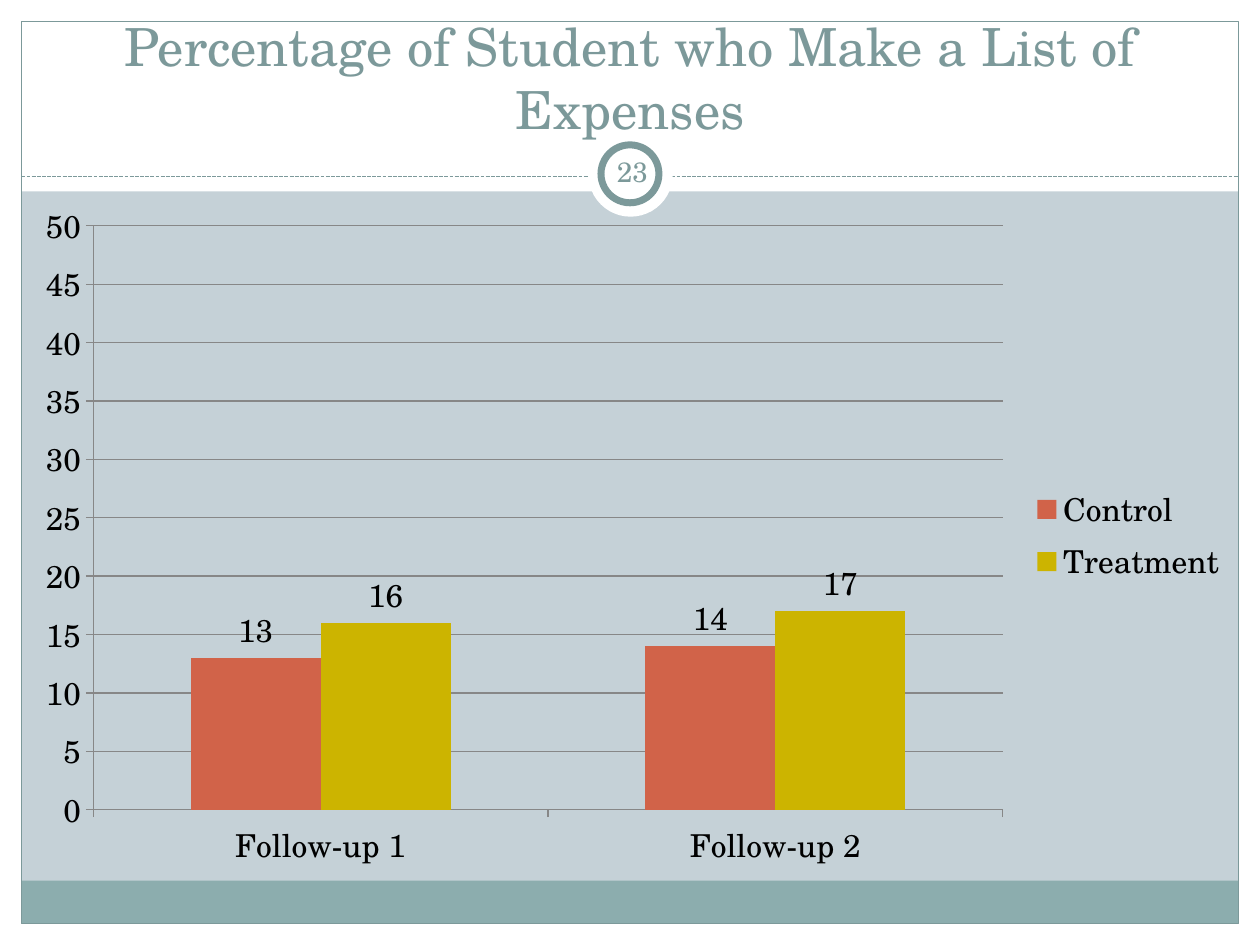
from lxml.etree import SubElement
from pptx import Presentation
from pptx.chart.data import CategoryChartData
from pptx.dml.color import RGBColor
from pptx.enum.chart import XL_CHART_TYPE as ChartType, XL_LABEL_POSITION as LabelPosition
from pptx.enum.chart import XL_LEGEND_POSITION as LegendPosition, XL_TICK_MARK as TickMark
from pptx.enum.dml import MSO_LINE as LineStyle
from pptx.enum.shapes import MSO_CONNECTOR as Connector, MSO_SHAPE as Shape
from pptx.enum.text import MSO_ANCHOR as Anchor, MSO_AUTO_SIZE as AutoSize, PP_ALIGN as Align
from pptx.oxml.ns import qn
from pptx.util import Inches, Pt

FONT = "TeX Gyre Schola"
BACKGROUND, WHITE, BLACK = "C5D1D7", "FFFFFF", "000000"
ACCENT, FOOTER, GRID = "7C999A", "8CADAE", "878787"
WIDTH, HEIGHT, MARGIN = 10, 7.5, 0.17
SERIES = [("Control", (13, 14), "D16349"), ("Treatment", (16, 17), "CCB400")]


def color(hex_string):
    return RGBColor.from_string(hex_string)


def set_fill(fill, hex_string):
    fill.solid()
    fill.fore_color.rgb = color(hex_string)


def set_line(line, hex_string, width):
    line.color.rgb = color(hex_string)
    line.width = Pt(width)


def set_font(font, size, hex_string):
    font.name = FONT
    font.size = Pt(size)
    font.color.rgb = color(hex_string)


def add_shape(slide, kind, box, fill=None, line=None, line_width=0.75):
    shape = slide.shapes.add_shape(kind, *map(Inches, box))
    shape.shadow.inherit = False
    if fill:
        set_fill(shape.fill, fill)
    else:
        shape.fill.background()
    if line:
        set_line(shape.line, line, line_width)
    else:
        shape.line.fill.background()


def add_divider(slide, y):
    ends = (MARGIN, y, WIDTH - MARGIN, y)
    divider = slide.shapes.add_connector(Connector.STRAIGHT, *map(Inches, ends))
    set_line(divider.line, ACCENT, 0.75)
    divider.line.dash_style = LineStyle.SQUARE_DOT
    SubElement(divider._element.spPr, qn("a:effectLst"))


def add_frame(slide):
    inner_width = WIDTH - 2 * MARGIN
    bottom = HEIGHT - MARGIN
    for box in (
        (0, bottom, WIDTH, MARGIN),
        (0, 0, WIDTH, 1.52),
        (0, 0, MARGIN, HEIGHT),
        (WIDTH - MARGIN, 0, MARGIN, HEIGHT),
    ):
        add_shape(slide, Shape.RECTANGLE, box, WHITE)
    add_shape(slide, Shape.RECTANGLE, (MARGIN, 6.99, inner_width, 0.34), FOOTER)
    add_shape(slide, Shape.RECTANGLE, (MARGIN, MARGIN, inner_width, bottom - MARGIN), line=ACCENT)
    add_divider(slide, 1.4)
    add_shape(slide, Shape.OVAL, (4.67, 1.05, 0.67, 0.67), WHITE)
    add_shape(slide, Shape.OVAL, (4.77, 1.15, 0.46, 0.46), WHITE, ACCENT, 4)


def write_text(shape, text, size, anchor):
    frame = shape.text_frame
    frame.word_wrap = True
    frame.auto_size = AutoSize.NONE
    frame.vertical_anchor = anchor
    paragraph = frame.paragraphs[0]
    paragraph.alignment = Align.CENTER
    run = paragraph.add_run()
    run.text = text
    set_font(run.font, size, ACCENT)


def add_title(slide, text):
    """Fill the title placeholder and bring it in front of the frame."""
    title = slide.shapes.title
    title.left, title.top, title.width, title.height = map(Inches, (0, 0.33, WIDTH, 0.83))
    write_text(title, text, 30, Anchor.BOTTOM)
    slide.shapes._spTree.append(title._element)


def add_page_number(slide, text):
    box = slide.shapes.add_textbox(*map(Inches, (4.77, 1.12, 0.5, 0.48)))
    frame = box.text_frame
    frame.margin_left = frame.margin_right = Inches(0.05)
    frame.margin_top = frame.margin_bottom = Inches(0.05)
    write_text(box, text, 16, Anchor.MIDDLE)


def format_axes(chart):
    value_axis, category_axis = chart.value_axis, chart.category_axis
    value_axis.minimum_scale, value_axis.maximum_scale = 0, 50
    value_axis.major_unit = 5
    value_axis.tick_labels.number_format = "#,##0"
    value_axis.tick_labels.number_format_is_linked = False
    value_axis.has_major_gridlines = True
    set_line(value_axis.major_gridlines.format.line, GRID, 0.75)
    for axis in (value_axis, category_axis):
        axis.major_tick_mark = TickMark.OUTSIDE
        axis.minor_tick_mark = TickMark.NONE
        set_line(axis.format.line, GRID, 0.75)


def format_series(series, fill):
    set_fill(series.format.fill, fill)
    series.invert_if_negative = False
    labels = series.data_labels
    labels.show_value = True
    labels.number_format = "0"
    labels.number_format_is_linked = False
    labels.position = LabelPosition.OUTSIDE_END


def add_column_chart(slide):
    data = CategoryChartData()
    data.categories = ["Follow-up 1", "Follow-up 2"]
    for name, values, _ in SERIES:
        data.add_series(name, values)
    box = map(Inches, (MARGIN, 1.5, 9.67, 5.5))
    graphic = slide.shapes.add_chart(ChartType.COLUMN_CLUSTERED, *box, data)
    # The page number ring overlaps the top of the chart.
    slide.shapes._spTree.insert(2, graphic._element)
    chart = graphic.chart
    chart.has_title = False
    set_font(chart.font, 18, BLACK)
    chart.has_legend = True
    chart.legend.position = LegendPosition.RIGHT
    chart.legend.include_in_layout = False
    format_axes(chart)
    plot = chart.plots[0]
    plot.vary_by_categories = False
    plot.gap_width = 150
    plot.overlap = 0
    for series, (_, _, fill) in zip(plot.series, SERIES):
        format_series(series, fill)


def main():
    presentation = Presentation()
    presentation.slide_width, presentation.slide_height = Inches(WIDTH), Inches(HEIGHT)
    slide = presentation.slides.add_slide(presentation.slide_layouts[5])
    set_fill(slide.background.fill, BACKGROUND)
    add_frame(slide)
    add_title(slide, "Percentage of Student who Make a List of Expenses")
    add_page_number(slide, "23")
    add_column_chart(slide)
    presentation.save("out.pptx")


if __name__ == "__main__":
    main()
